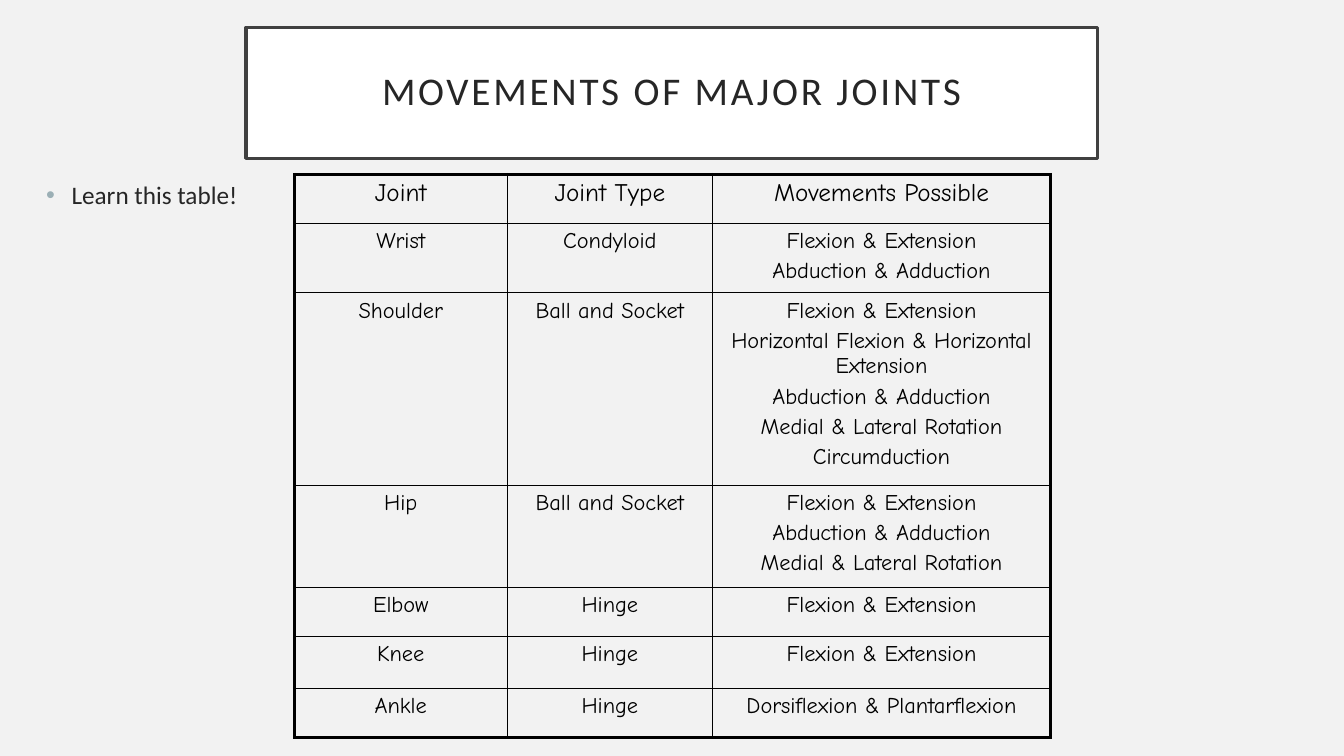
import pptx
import pptx.dml.color
import pptx.enum.text
import pptx.oxml
import pptx.oxml.ns
import pptx.util
from pptx.util import Cm, Pt

RGBColor = pptx.dml.color.RGBColor
PP_ALIGN = pptx.enum.text.PP_ALIGN
MSO_ANCHOR = pptx.enum.text.MSO_ANCHOR

BACKGROUND = RGBColor(0xF2, 0xF2, 0xF2)
WHITE = RGBColor(0xFF, 0xFF, 0xFF)
FRAME = RGBColor(0x40, 0x40, 0x40)
INK = RGBColor(0x26, 0x26, 0x26)
BULLET = RGBColor(0x9B, 0xAF, 0xB5)
BLACK = RGBColor(0, 0, 0)

FLEXION = "Flexion & Extension"
ABDUCTION = "Abduction & Adduction"
ROTATION = "Medial & Lateral Rotation"

# Row height in cm, joint, joint type, movements
JOINTS = [
    (1.24, "Joint", "Joint Type", ["Movements Possible"]),
    (1.75, "Wrist", "Condyloid", [FLEXION, ABDUCTION]),
    (4.85, "Shoulder", "Ball and Socket",
     [FLEXION, "Horizontal Flexion & Horizontal Extension", ABDUCTION, ROTATION,
      "Circumduction"]),
    (2.57, "Hip", "Ball and Socket", [FLEXION, ABDUCTION, ROTATION]),
    (1.24, "Elbow", "Hinge", [FLEXION]),
    (1.3, "Knee", "Hinge", [FLEXION]),
    (1.24, "Ankle", "Hinge", ["Dorsiflexion & Plantarflexion"]),
]
COLUMN_WIDTHS = [5.36, 5.18, 8.51]


def add_xml(parent, xml):
    """Append an element written with the a: prefix."""
    name, rest = xml[1:].split(" ", 1) if " " in xml.split(">")[0] else xml[1:].split(">", 1)
    gap = " " if " " in xml.split(">")[0] else ">"
    ns = pptx.oxml.ns.nsdecls("a")
    parent.append(pptx.oxml.parse_xml(f"<{name} {ns}{gap}{rest}"))


def write(p, text, font="Calibri", size=18, color=INK, align=None, spacing=None):
    p.alignment = align
    r = p.add_run()
    r.text = text
    r.font.name = font
    r.font.size = Pt(size)
    r.font.color.rgb = color
    if spacing:
        r.font._element.set("spc", str(spacing * 100))


class SlideBuilder:
    """Holds the slide and the fonts its elements share."""

    def __init__(self, prs, text_font="Calibri", table_font="Comic Neue"):
        self.s = prs.slides.add_slide(prs.slide_layouts[1])
        self.s.background.fill.solid()
        self.s.background.fill.fore_color.rgb = BACKGROUND
        self.text_font, self.table_font = text_font, table_font

    def place(self, sp, left, top, width, height):
        sp.left, sp.top, sp.width, sp.height = Cm(left), Cm(top), Cm(width), Cm(height)
        sp.text_frame.auto_size = pptx.enum.text.MSO_AUTO_SIZE.NONE
        sp.text_frame.word_wrap = True
        return sp.text_frame

    def title(self, text, *box):
        sp = self.s.shapes.title
        tf = self.place(sp, *box)
        sp.fill.solid()
        sp.fill.fore_color.rgb = WHITE
        sp.line.color.rgb = FRAME
        sp.line.width = Pt(2.5)
        tf.vertical_anchor = MSO_ANCHOR.MIDDLE
        tf.margin_left = tf.margin_right = tf.margin_top = tf.margin_bottom = Cm(0.5)
        p = tf.paragraphs[0]
        p.line_spacing = 0.9
        write(p, text, self.text_font, 28, align=PP_ALIGN.CENTER, spacing=2)

    def bullet(self, text, *box):
        tf = self.place(self.s.placeholders[1], *box)
        tf.vertical_anchor = MSO_ANCHOR.TOP
        p = tf.paragraphs[0]
        p.space_before = Pt(10)
        write(p, text, self.text_font, 18)
        pPr = p._p.get_or_add_pPr()
        pPr.set("marL", str(Cm(0.64)))
        pPr.set("indent", str(-Cm(0.64)))
        add_xml(pPr, f'<a:buClr><a:srgbClr val="{BULLET}"/></a:buClr>')
        add_xml(pPr, '<a:buFont typeface="Arial"/>')
        add_xml(pPr, '<a:buChar char="•"/>')

    def border(self, cell, **widths):
        for side in "LRTB":
            add_xml(cell._tc.get_or_add_tcPr(),
                    f'<a:ln{side} w="{Pt(widths[side])}"><a:solidFill>'
                    f'<a:srgbClr val="{BLACK}"/></a:solidFill></a:ln{side}>')

    def cell(self, cell, lines, size):
        tf = cell.text_frame
        for i, line in enumerate(lines):
            p = tf.add_paragraph() if i else tf.paragraphs[0]
            write(p, line, self.table_font, size, BLACK, PP_ALIGN.CENTER)
            add_xml(p._p.get_or_add_pPr(),
                    '<a:spcBef><a:spcPct val="20000"/></a:spcBef>')

    def table(self, rows, widths, left, top):
        heights = [row[0] for row in rows]
        table = self.s.shapes.add_table(
            len(rows), len(widths), Cm(left), Cm(top),
            Cm(sum(widths)), Cm(sum(heights))).table
        table.first_row = table.horz_banding = False
        for column, width in zip(table.columns, widths):
            column.width = Cm(width)
        last_row, last_col = len(rows) - 1, len(widths) - 1
        for i, (height, joint, kind, movements) in enumerate(rows):
            table.rows[i].height = Cm(height)
            for j, lines in enumerate([[joint], [kind], movements]):
                cell = table.cell(i, j)
                self.cell(cell, lines, 16 if i else 18)
                edges = {"L": j == 0, "R": j == last_col, "T": i == 0, "B": i == last_row}
                self.border(cell, **{k: 2.25 if outer else 1 for k, outer in edges.items()})
                cell.fill.background()


def main():
    prs = pptx.Presentation()
    prs.slide_width, prs.slide_height = Cm(33.87), Cm(19.05)
    slide = SlideBuilder(prs)
    slide.title("MOVEMENTS OF MAJOR JOINTS", 6.2, 0.69, 21.46, 3.3)
    slide.bullet("Learn this table!", 0.91, 4.39, 21.46, 8.61)
    slide.table(JOINTS, COLUMN_WIDTHS, 7.42, 4.39)
    prs.save("out.pptx")


if __name__ == "__main__":
    main()
